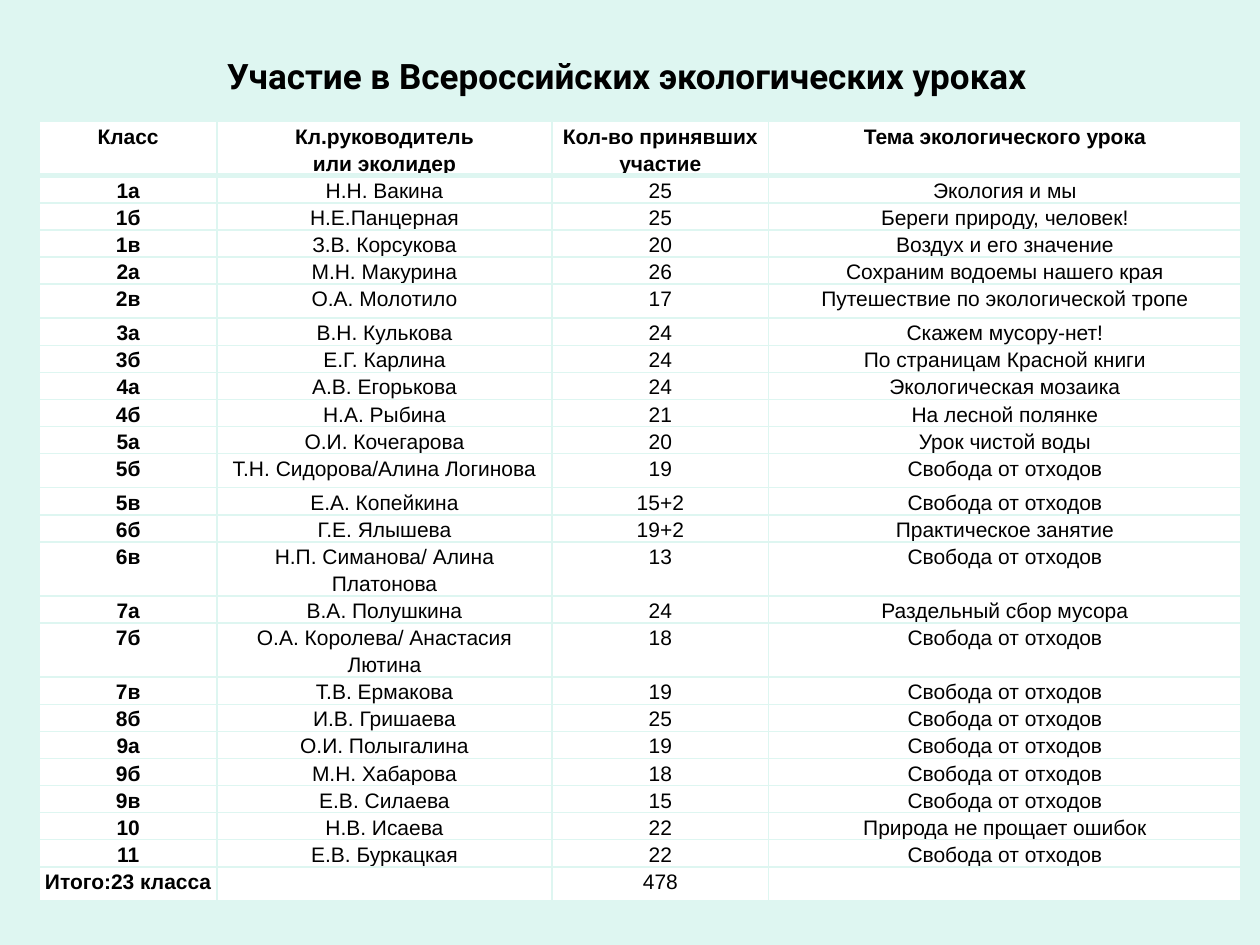
from lxml import etree
from pptx import Presentation
from pptx.dml.color import RGBColor
from pptx.enum import text
from pptx.oxml import ns
from pptx.util import Pt

COLORS = {"background": "DEF6F1", "cell": "FFFFFF", "text": "000000"}
TITLE = "Участие в Всероссийских экологических уроках"
HEADER = ("Класс", "Кл.руководитель\nили эколидер", "Кол-во принявших\nучастие",
          "Тема экологического урока")
WASTE = "Свобода от отходов"
LESSONS = [
    ("1а", "Н.Н. Вакина", "25", "Экология и мы"),
    ("1б", "Н.Е.Панцерная", "25", "Береги природу, человек!"),
    ("1в", "З.В. Корсукова", "20", "Воздух и его значение"),
    ("2а", "М.Н. Макурина", "26", "Сохраним водоемы нашего края"),
    ("2в", "О.А. Молотило", "17", "Путешествие по экологической тропе"),
    ("3а", "В.Н. Кулькова", "24", "Скажем мусору-нет!"),
    ("3б", "Е.Г. Карлина", "24", "По страницам Красной книги"),
    ("4а", "А.В. Егорькова", "24", "Экологическая мозаика"),
    ("4б", "Н.А. Рыбина", "21", "На лесной полянке"),
    ("5а", "О.И. Кочегарова", "20", "Урок чистой воды"),
    ("5б", "Т.Н. Сидорова/Алина Логинова", "19", WASTE),
    ("5в", "Е.А. Копейкина", "15+2", WASTE),
    ("6б", "Г.Е. Ялышева", "19+2", "Практическое занятие"),
    ("6в", "Н.П. Симанова/ Алина Платонова", "13", WASTE),
    ("7а", "В.А. Полушкина", "24", "Раздельный сбор мусора"),
    ("7б", "О.А. Королева/ Анастасия Лютина", "18", WASTE),
    ("7в", "Т.В. Ермакова", "19", WASTE),
    ("8б", "И.В. Гришаева", "25", WASTE),
    ("9а", "О.И. Полыгалина", "19", WASTE),
    ("9б", "М.Н. Хабарова", "18", WASTE),
    ("9в", "Е.В. Силаева", "15", WASTE),
    ("10", "Н.В. Исаева", "22", "Природа не прощает ошибок"),
    ("11", "Е.В. Буркацкая", "22", WASTE),
]
TOTAL = ("Итого:23 класса", "", "478", "")
TALL_CLASSES = {"2в", "5б", "6в", "7б", TOTAL[0]}
COLUMN_WIDTHS = (101.5, 191.5, 123.8, 270)
HEADER_HEIGHT, ROW_HEIGHT, TALL_HEIGHT = 29.5, 10, 19.5


def write_text(frame, content, font="Arial", size=12, bold=False, spacing=None):
    """Fill a text frame with centred paragraphs in one format."""
    frame.text = content
    for paragraph in frame.paragraphs:
        paragraph.alignment = text.PP_ALIGN.CENTER
        paragraph.line_spacing = spacing
        paragraph.font.size = Pt(size)
        for run in paragraph.runs:
            run.font.name = font
            run.font.size = Pt(size)
            run.font.bold = bold
            run.font.color.rgb = RGBColor.from_string(COLORS["text"])


def add_borders(cell, top=1, bottom=1):
    """Draw the four borders of a cell in the background colour."""
    properties = cell._tc.get_or_add_tcPr()
    for side, width in (("L", 1), ("R", 1), ("T", top), ("B", bottom)):
        line = etree.SubElement(properties, ns.qn(f"a:ln{side}"), w=str(Pt(width)))
        fill = etree.SubElement(line, ns.qn("a:solidFill"))
        etree.SubElement(fill, ns.qn("a:srgbClr"), val=COLORS["background"])


def add_title(slide, left, top, width, height):
    """Place the slide title in its box."""
    frame = slide.shapes.add_textbox(Pt(left), Pt(top), Pt(width), Pt(height)).text_frame
    frame.word_wrap = False
    frame.auto_size = text.MSO_AUTO_SIZE.SHAPE_TO_FIT_TEXT
    frame.vertical_anchor = text.MSO_ANCHOR.MIDDLE
    write_text(frame, TITLE, font="Roboto", size=20, bold=True)


def add_lesson_table(slide, left, top):
    """Place the table of lessons with its header and total."""
    rows = [HEADER, *LESSONS, TOTAL]
    heights = [HEADER_HEIGHT] + [
        TALL_HEIGHT if row[0] in TALL_CLASSES else ROW_HEIGHT for row in rows[1:]]
    table = slide.shapes.add_table(len(rows), len(HEADER), Pt(left), Pt(top),
                                   Pt(sum(COLUMN_WIDTHS)), Pt(sum(heights))).table
    table.first_row = table.horz_banding = False
    for column, width in zip(table.columns, COLUMN_WIDTHS):
        column.width = Pt(width)
    for i, (row, height) in enumerate(zip(rows, heights)):
        table.rows[i].height = Pt(height)
        for j, content in enumerate(row):
            cell = table.cell(i, j)
            cell.margin_left = cell.margin_right = Pt(3)
            cell.margin_top = cell.margin_bottom = 0
            add_borders(cell, top=3 if i == 1 else 1, bottom=3 if i == 0 else 1)
            cell.fill.solid()
            cell.fill.fore_color.rgb = RGBColor.from_string(COLORS["cell"])
            write_text(cell.text_frame, content, bold=i == 0 or j == 0, spacing=1.15)


def main():
    """Build and save the presentation."""
    presentation = Presentation()
    presentation.slide_width, presentation.slide_height = Pt(720), Pt(540)
    slide = presentation.slides.add_slide(presentation.slide_layouts[6])
    slide.background.fill.solid()
    slide.background.fill.fore_color.rgb = RGBColor.from_string(COLORS["background"])
    add_lesson_table(slide, 22.5, 69.5)
    add_title(slide, 109.5, 27.5, 497.5, 31.5)
    presentation.save("out.pptx")


if __name__ == "__main__":
    main()
